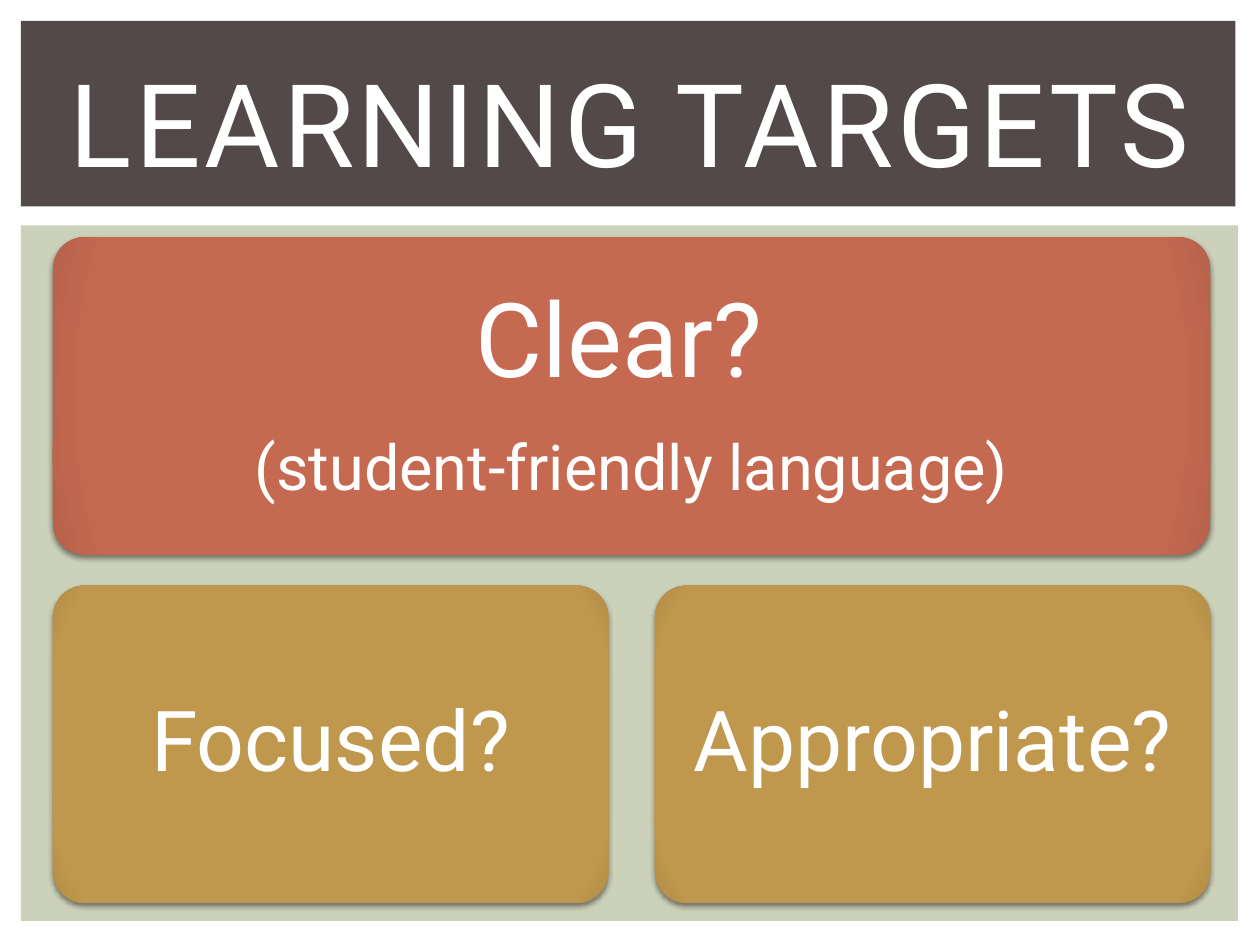
from lxml import etree
from pptx import Presentation
from pptx import util as u
from pptx.dml.color import RGBColor
from pptx.enum import shapes, text
from pptx.oxml import parse_xml
from pptx.oxml.ns import qn

NS = 'xmlns:a="http://schemas.openxmlformats.org/drawingml/2006/main"'
SHADOW = f"""<a:effectLst {NS}><a:outerShdw blurRad="38100" dist="25400" dir="5400000"
 rotWithShape="0"><a:srgbClr val="000000"><a:alpha val="45000"/></a:srgbClr></a:outerShdw></a:effectLst>"""
GRADIENT = """<a:gradFill {ns} rotWithShape="1"><a:gsLst>
<a:gs pos="0"><a:srgbClr val="{base}"/></a:gs><a:gs pos="90000"><a:srgbClr val="{base}"/></a:gs>
<a:gs pos="100000"><a:srgbClr val="{edge}"/></a:gs></a:gsLst>
<a:path path="circle"><a:fillToRect l="100000" t="100000" r="100000" b="100000"/></a:path></a:gradFill>"""


def rgb(value):
    return RGBColor.from_string(value)


def add_text(tf, content, size, first=True, spacing=None, after=None, tracking=None):
    p = tf.paragraphs[0] if first else tf.add_paragraph()
    p.alignment = text.PP_ALIGN.CENTER
    p.line_spacing = spacing
    if after:
        p.space_after = u.Pt(0)
        sa = p._p.pPr.find(qn("a:spcAft"))
        sa.clear()
        etree.SubElement(sa, qn("a:spcPct")).set("val", str(after * 1000))
    r = p.add_run()
    r.text = content
    r.font.size = u.Pt(size)
    r.font.name = "Roboto"
    r.font.color.rgb = rgb("FFFFFF")
    if tracking:
        r._r.get_or_add_rPr().set("spc", str(tracking * 100))


prs = Presentation()
prs.slide_width, prs.slide_height = u.Pt(720), u.Pt(540)
s = prs.slides.add_slide(prs.slide_layouts[6])

for top, width, height, color in [(128.8, 695.5, 397.4, "CCD1B9"), (12, 694, 106, "534949")]:
    sp = s.shapes.add_shape(shapes.MSO_SHAPE.RECTANGLE, u.Pt(12), u.Pt(top), u.Pt(width), u.Pt(height))
    sp.shadow.inherit = False
    sp.fill.solid()
    sp.fill.fore_color.rgb = rgb(color)
    sp.line.fill.background()

RED, GOLD = ("C66951", "B8624B"), ("BF974D", "B28D48")
left, full, half, height = 30.2, 661.5, 317.5, 181.4
right = left + full - half
cards = [
    (left, 135.5, full, RED, 18, [("Clear? ", 59), ("(student-friendly language)", 36)]),
    (left, 334.6, half, GOLD, 14.4, [("Focused?", 48)]),
    (right, 334.6, half, GOLD, 14.4, [("Appropriate?", 48)]),
]
for x, y, width, (base, edge), inset, lines in cards:
    sp = s.shapes.add_shape(shapes.MSO_SHAPE.ROUNDED_RECTANGLE, u.Pt(x), u.Pt(y), u.Pt(width), u.Pt(height))
    sp.adjustments[0] = 0.1
    sp.line.fill.background()
    props = sp._element.spPr
    props.find(qn("a:prstGeom")).addnext(parse_xml(GRADIENT.format(ns=NS, base=base, edge=edge)))
    props.append(parse_xml(SHADOW))
    tf = sp.text_frame
    tf.word_wrap = True
    tf.vertical_anchor = text.MSO_ANCHOR.MIDDLE
    tf.margin_left = tf.margin_top = tf.margin_right = tf.margin_bottom = u.Pt(inset)
    for i, (content, size) in enumerate(lines):
        add_text(tf, content, size, first=i == 0, spacing=0.9, after=35)

title = s.shapes.add_textbox(u.Pt(30.2), u.Pt(28), u.Pt(660.2), u.Pt(83))
tf = title.text_frame
tf.word_wrap = True
tf.vertical_anchor = text.MSO_ANCHOR.MIDDLE
add_text(tf, "LEARNING TARGETS", 66, tracking=2)

prs.save("out.pptx")
